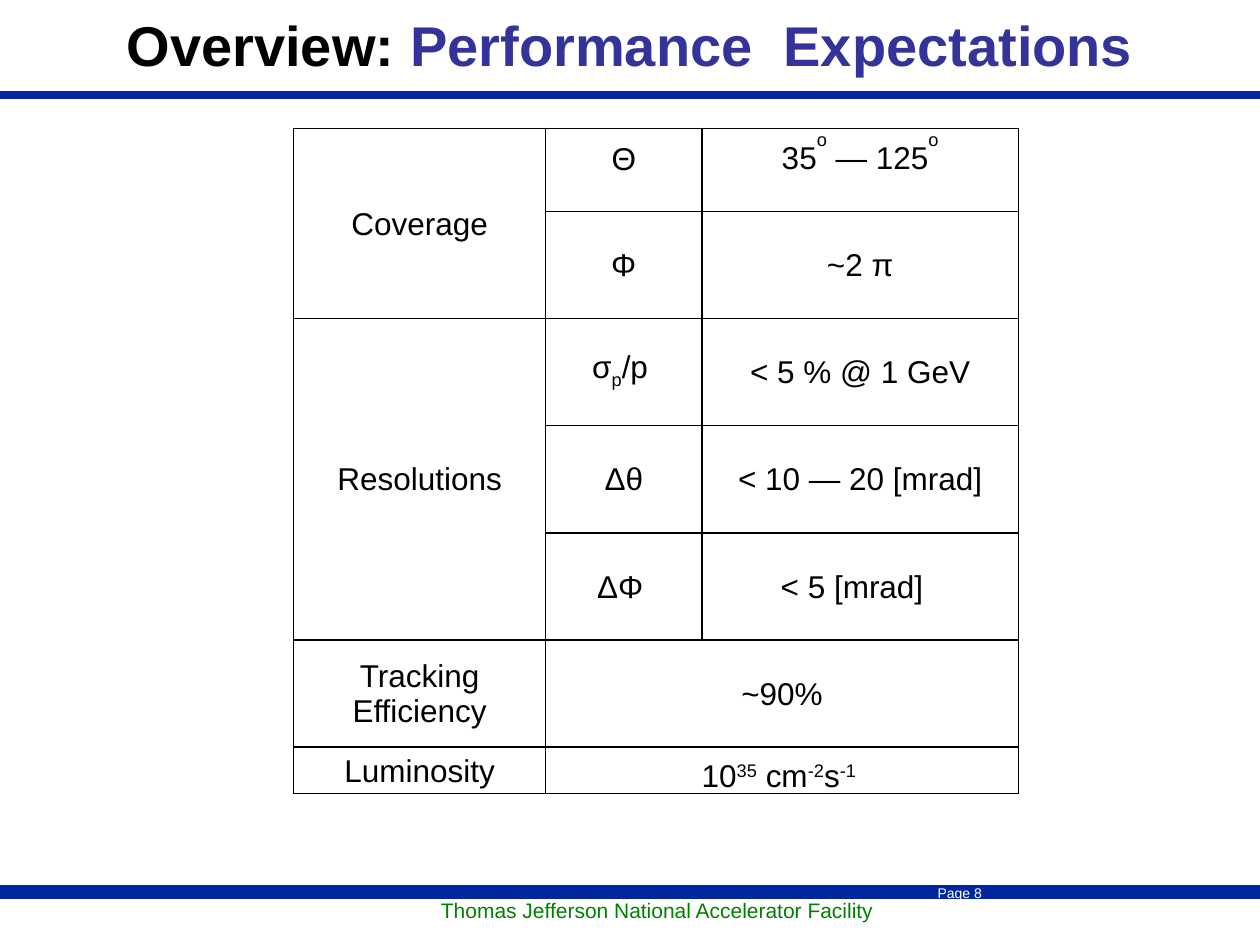
from lxml import etree
from pptx import Presentation
from pptx.dml.color import RGBColor
from pptx.enum import shapes, text
from pptx.oxml import ns
from pptx.util import Cm, Pt

BLACK = RGBColor(0x00, 0x00, 0x00)
WHITE = RGBColor(0xFF, 0xFF, 0xFF)
RULE_BLUE = RGBColor(0x00, 0x27, 0x9F)
TITLE_BLUE = RGBColor(0x33, 0x33, 0x99)
FOOTER_GREEN = RGBColor(0x00, 0x80, 0x00)

COLUMN_WIDTHS = [5.08, 3.15, 6.38]
ROW_HEIGHTS = [1.67] + [2.16] * 5 + [0.94]
MERGES = [((0, 0), (1, 0)), ((2, 0), (4, 0)), ((5, 1), (5, 2)), ((6, 1), (6, 2))]
RAISED, SUPER, SUB = 74, 30, -25
EXPECTATIONS = {
    (0, 0): [("Coverage", 0)],
    (0, 1): [("Θ", 0)],
    (0, 2): [("35", 0), ("o", RAISED), (" — 125", 0), ("o", RAISED)],
    (1, 1): [("Φ", 0)],
    (1, 2): [("~2 π", 0)],
    (2, 0): [("Resolutions", 0)],
    (2, 1): [("σ", 0), ("p", SUB), ("/p", 0)],
    (2, 2): [("< 5 % @ 1 GeV", 0)],
    (3, 1): [("Δθ", 0)],
    (3, 2): [("< 10 — 20 [mrad]", 0)],
    (4, 1): [("ΔΦ", 0)],
    (4, 2): [("< 5 [mrad]", 0)],
    (5, 0): [("Tracking Efficiency", 0)],
    (5, 1): [("~90%", 0)],
    (6, 0): [("Luminosity", 0)],
    (6, 1): [("10", 0), ("35", SUPER), (" cm", 0), ("-2", SUPER), ("s", 0), ("-1", SUPER)],
}
ANCHORS = {(0, 2): text.MSO_ANCHOR.TOP, (6, 1): text.MSO_ANCHOR.BOTTOM}
RIGHT_INSETS = {(2, 1): 0.18, (4, 1): 0.18, (4, 2): 0.36, (6, 1): 0.16}
BOTTOM_INSETS = {(0, 1): 0.44, (2, 1): 0.1}


def style_font(font, size, color, bold=False):
    """Apply the slide's typeface with a size, colour and weight."""
    font.name, font.size, font.bold = "Arial", Pt(size), bold
    font.color.rgb = color


def clear_insets(frame):
    """Remove the inner margins of a text frame."""
    frame.margin_left = frame.margin_right = frame.margin_top = frame.margin_bottom = 0


def add_title(slide):
    """Fill the title placeholder with its two-colour heading."""
    title = slide.shapes.title
    title.left, title.top, title.width, title.height = Cm(0), Cm(0), Cm(25.4), Cm(1.78)
    title.text_frame.vertical_anchor = text.MSO_ANCHOR.MIDDLE
    heading = title.text_frame.paragraphs[0]
    heading.alignment = text.PP_ALIGN.CENTER
    for words, color in (("Overview: ", BLACK), ("Performance  Expectations", TITLE_BLUE)):
        run = heading.add_run()
        run.text = words
        style_font(run.font, 32, color, True)


def add_rule(slide, top, weight):
    """Draw a blue line across the full slide."""
    rule = slide.shapes.add_connector(
        shapes.MSO_CONNECTOR.STRAIGHT, Cm(0), Cm(top), Cm(25.4), Cm(top))
    rule.line.color.rgb = RULE_BLUE
    rule.line.width = Pt(weight)
    etree.SubElement(rule._element.spPr, ns.qn("a:effectLst"))


def add_facility(slide):
    """Place the facility name on its white strip."""
    strip = slide.shapes.add_shape(
        shapes.MSO_SHAPE.RECTANGLE, Cm(8.89), Cm(18.19), Cm(9.53), Cm(0.43))
    strip.shadow.inherit = False
    strip.fill.solid()
    strip.fill.fore_color.rgb = WHITE
    strip.line.fill.background()
    clear_insets(strip.text_frame)
    strip.text_frame.vertical_anchor = text.MSO_ANCHOR.TOP
    facility = strip.text_frame.paragraphs[0]
    facility.text = "Thomas Jefferson National Accelerator Facility"
    facility.alignment = text.PP_ALIGN.LEFT
    facility.line_spacing = 0.8
    style_font(facility.font, 12, FOOTER_GREEN)


def add_page_number(slide):
    """Place the page number on the lower rule."""
    label = slide.shapes.add_textbox(Cm(18.9), Cm(17.83), Cm(1.09), Cm(0.33))
    clear_insets(label.text_frame)
    label.text_frame.word_wrap = False
    page = label.text_frame.paragraphs[0]
    page.text = "Page 8"
    style_font(page.font, 8, WHITE)


def outline_cell(cell):
    """Give a cell no fill and a thin black border on every side."""
    cell.fill.background()
    properties = cell._tc.get_or_add_tcPr()
    for position, side in enumerate(("lnL", "lnR", "lnT", "lnB")):
        border = etree.Element(ns.qn(f"a:{side}"), w=str(Pt(1)))
        fill = etree.SubElement(border, ns.qn("a:solidFill"))
        etree.SubElement(fill, ns.qn("a:srgbClr"), val=str(BLACK))
        properties.insert(position, border)


def write_cell(cell, place, pieces):
    """Write a centred cell from pieces of text and their baseline shifts."""
    cell.margin_left = cell.margin_top = Cm(0.03)
    cell.margin_right = Cm(RIGHT_INSETS.get(place, 0.03))
    cell.margin_bottom = Cm(BOTTOM_INSETS.get(place, 0))
    cell.vertical_anchor = ANCHORS.get(place, text.MSO_ANCHOR.MIDDLE)
    entry = cell.text_frame.paragraphs[0]
    entry.alignment = text.PP_ALIGN.CENTER
    style_font(entry.font, 18, BLACK)
    for words, shift in pieces:
        run = entry.add_run()
        run.text = words
        if shift:
            run.font._element.set("baseline", str(shift * 1000))


def add_expectations(slide):
    """Build the table of performance expectations."""
    table = slide.shapes.add_table(
        len(ROW_HEIGHTS), len(COLUMN_WIDTHS), Cm(5.92), Cm(2.59),
        Cm(sum(COLUMN_WIDTHS)), Cm(sum(ROW_HEIGHTS))).table
    table.first_row = table.horz_banding = False
    for column, width in zip(table.columns, COLUMN_WIDTHS):
        column.width = Cm(width)
    for row, height in zip(table.rows, ROW_HEIGHTS):
        row.height = Cm(height)
    for cell in table.iter_cells():
        outline_cell(cell)
    for first, last in MERGES:
        table.cell(*first).merge(table.cell(*last))
    for place, pieces in EXPECTATIONS.items():
        write_cell(table.cell(*place), place, pieces)


def main():
    """Build and save the slide."""
    deck = Presentation()
    deck.slide_width, deck.slide_height = Cm(25.4), Cm(19.05)
    slide = deck.slides.add_slide(deck.slide_layouts[5])
    add_rule(slide, 1.91, 4.5)
    add_rule(slide, 17.98, 8)
    add_facility(slide)
    add_page_number(slide)
    add_title(slide)
    add_expectations(slide)
    deck.save("out.pptx")


if __name__ == "__main__":
    main()
